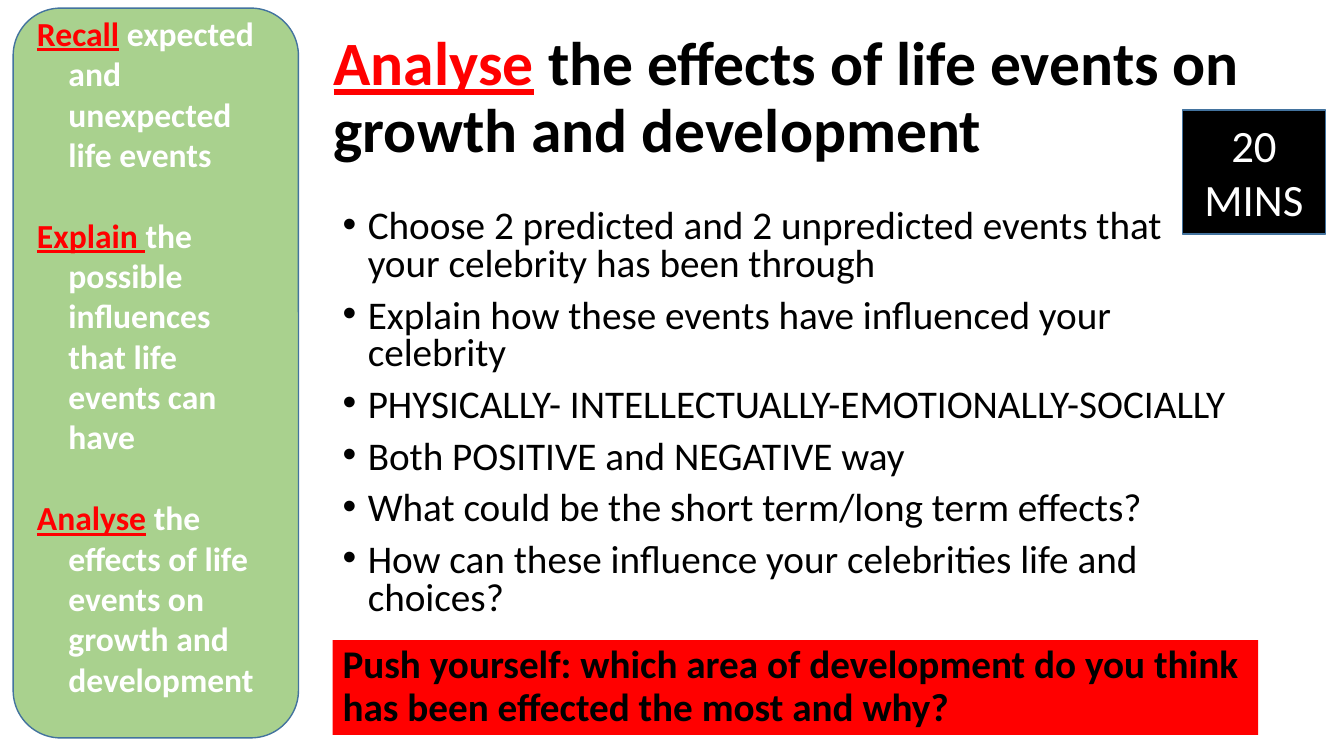
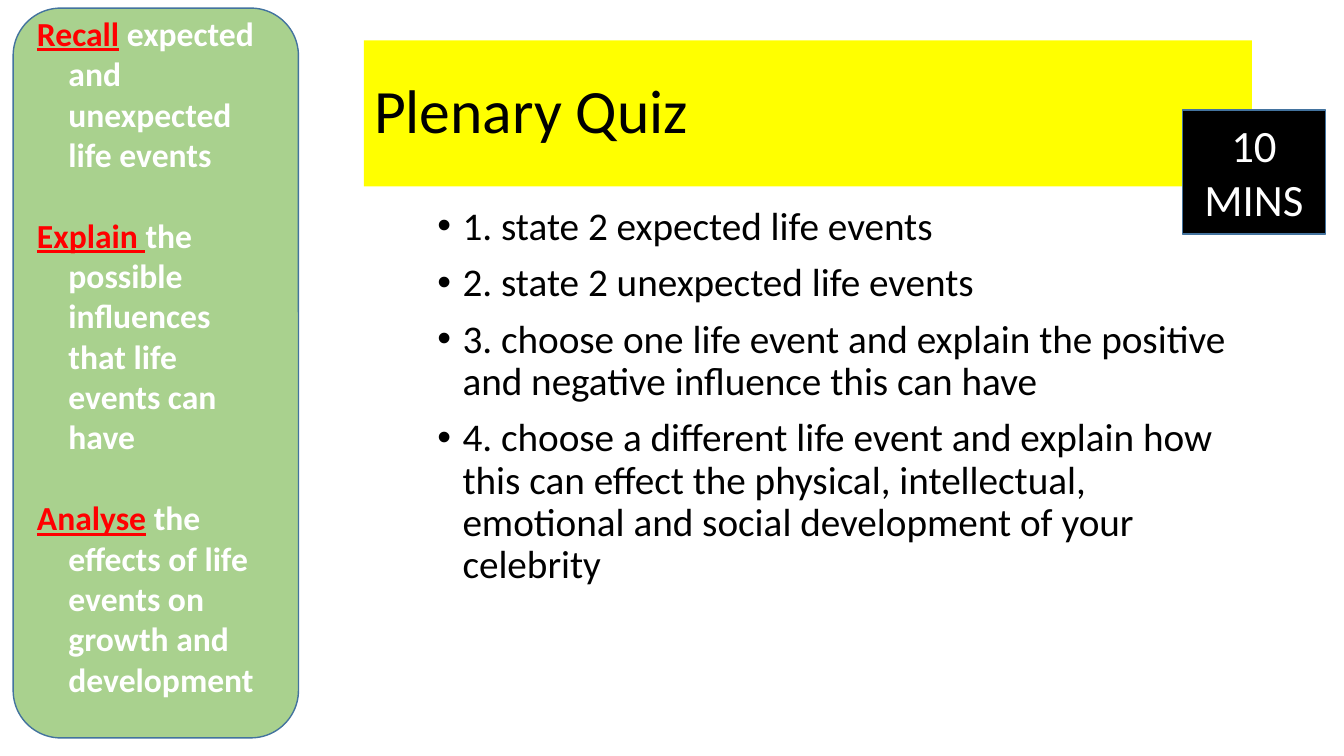
from lxml.etree import SubElement
from pptx import Presentation
from pptx.dml.color import RGBColor
from pptx.enum.shapes import MSO_SHAPE
from pptx.enum.text import MSO_ANCHOR, MSO_AUTO_SIZE, PP_ALIGN
from pptx.oxml.ns import qn
from pptx.util import Pt

BLACK = RGBColor(0x00, 0x00, 0x00)
WHITE = RGBColor(0xFF, 0xFF, 0xFF)
RED = RGBColor(0xFF, 0x00, 0x00)
YELLOW = RGBColor(0xFF, 0xFF, 0x00)
GREEN = RGBColor(0xA9, 0xD1, 0x8E)
OUTLINE = RGBColor(0x43, 0x73, 0x9E)
FONT = "Calibri"

OBJECTIVES = [
    ("Recall", " expected and unexpected life events"),
    ("Explain ", "the possible influences that life events can have"),
    ("Analyse", " the effects of life events on growth and development"),
]
TASKS = [
    "Choose 2 predicted and 2 unpredicted events that your celebrity has been through",
    "Explain how these events have influenced your celebrity",
    "PHYSICALLY- INTELLECTUALLY-EMOTIONALLY-SOCIALLY",
    "Both POSITIVE and NEGATIVE way",
    "What could be the short term/long term effects?",
    "How can these influence your celebrities life and choices?",
]
QUESTIONS = [
    "1. state 2 expected life events",
    "2. state 2 unexpected life events",
    "3. choose one life event and explain the positive and negative influence this can have",
    "4. choose a different life event and explain how this can effect the physical, "
    "intellectual, emotional and social development of your celebrity",
]


def add_text(para, text, size=28, color=BLACK, bold=False, underline=False):
    span = para.add_run()
    span.text = text
    font = span.font
    font.name = FONT
    font.size = Pt(size)
    font.color.rgb = color
    font.bold = bold
    font.underline = underline


def add_verb_phrase(para, verb, rest, size, color):
    add_text(para, verb, size=size, color=RED, bold=True, underline=True)
    add_text(para, rest, size=size, color=color, bold=True)


def next_para(frame, index):
    return frame.add_paragraph() if index else frame.paragraphs[0]


def set_indent(para, hang):
    properties = para._p.get_or_add_pPr()
    properties.set("marL", str(Pt(hang)))
    properties.set("indent", str(-Pt(hang)))
    return properties


def prepare_frame(frame, anchor=MSO_ANCHOR.MIDDLE):
    frame.word_wrap = True
    frame.auto_size = MSO_AUTO_SIZE.NONE
    frame.vertical_anchor = anchor


def add_panel(page, kind, left, top, width, height, fill, outline=None):
    panel = page.shapes.add_shape(kind, Pt(left), Pt(top), Pt(width), Pt(height))
    panel.shadow.inherit = False
    panel.fill.solid()
    panel.fill.fore_color.rgb = fill
    if outline is None:
        panel.line.fill.background()
    else:
        panel.line.color.rgb = outline
        panel.line.width = Pt(1)
    prepare_frame(panel.text_frame)
    return panel.text_frame


def place_title(page, left, top, width, fill=None):
    title = page.shapes.title
    title.left, title.top = Pt(left), Pt(top)
    title.width, title.height = Pt(width), Pt(104.4)
    if fill is not None:
        title.fill.solid()
        title.fill.fore_color.rgb = fill
    prepare_frame(title.text_frame)
    para = title.text_frame.paragraphs[0]
    para.alignment = PP_ALIGN.LEFT
    para.line_spacing = 0.9
    return para


def add_bullets(page, items, left, top, width, height, line_spacing):
    box = page.shapes.add_textbox(Pt(left), Pt(top), Pt(width), Pt(height))
    prepare_frame(box.text_frame, MSO_ANCHOR.TOP)
    for index, item in enumerate(items):
        para = next_para(box.text_frame, index)
        para.line_spacing = line_spacing
        para.space_before = Pt(10)
        properties = set_indent(para, 18)
        SubElement(properties, qn("a:buFont")).set("typeface", "Arial")
        SubElement(properties, qn("a:buChar")).set("char", "•")
        add_text(para, item)


def add_objectives(page):
    frame = add_panel(page, MSO_SHAPE.ROUNDED_RECTANGLE,
                      9.4, 5.8, 203.8, 521.3, GREEN, OUTLINE)
    frame.margin_bottom = Pt(28)
    for index, (verb, rest) in enumerate(OBJECTIVES):
        para = next_para(frame, index)
        para.alignment = PP_ALIGN.LEFT
        para.space_before = Pt(29 if index else 0)
        set_indent(para, 22.5)
        add_verb_phrase(para, verb, rest, size=24, color=WHITE)


def add_timer(page, minutes):
    frame = add_panel(page, MSO_SHAPE.RECTANGLE,
                      844.6, 78.5, 102.2, 88.6, BLACK, OUTLINE)
    para = frame.paragraphs[0]
    para.alignment = PP_ALIGN.CENTER
    add_text(para, f"{minutes} MINS", size=32, color=WHITE)


def add_challenge(page, text):
    frame = add_panel(page, MSO_SHAPE.RECTANGLE, 237.6, 457.2, 661, 67.7, RED)
    para = frame.paragraphs[0]
    para.alignment = PP_ALIGN.LEFT
    para.line_spacing = 0.9
    add_text(para, text, bold=True)


def add_page(deck, minutes):
    page = deck.slides.add_slide(deck.slide_layouts[5])
    add_objectives(page)
    return page, lambda: add_timer(page, minutes)


def build_task_page(deck):
    page, finish = add_page(deck, 20)
    title = place_title(page, 231.1, 18.7, 673.2)
    add_verb_phrase(title, "Analyse",
                    " the effects of life events on growth and development",
                    size=44, color=BLACK)
    add_bullets(page, TASKS, 237.6, 146.2, 656.6, 316, 0.8)
    add_challenge(page, "Push yourself: which area of development do you think "
                        "has been effected the most and why?")
    finish()


def build_quiz_page(deck):
    page, finish = add_page(deck, 10)
    title = place_title(page, 260, 28.8, 634.3, YELLOW)
    add_text(title, "Plenary Quiz", size=44)
    add_bullets(page, QUESTIONS, 305.3, 144, 589, 342.7, 0.9)
    finish()


def main():
    deck = Presentation()
    deck.slide_width, deck.slide_height = Pt(960), Pt(540)
    build_task_page(deck)
    build_quiz_page(deck)
    deck.save("out.pptx")


if __name__ == "__main__":
    main()
